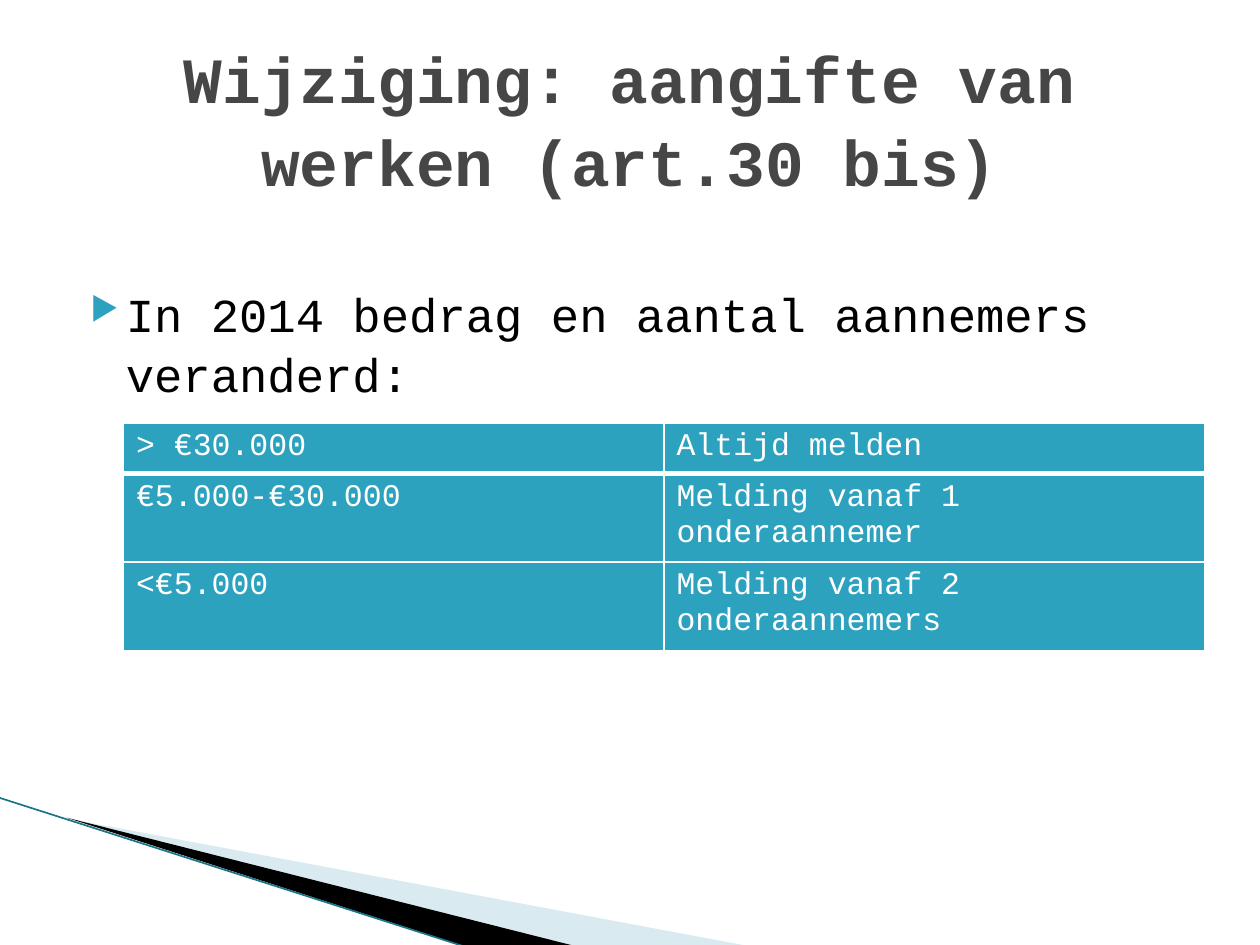
from dataclasses import dataclass
from typing import Optional

from lxml.etree import SubElement
from pptx import Presentation
from pptx.dml.color import RGBColor
from pptx.enum.shapes import MSO_CONNECTOR
from pptx.enum.text import MSO_ANCHOR as Anchor, PP_ALIGN as Align
from pptx.oxml.ns import qn
from pptx.util import Inches, Pt

COLORS = {"teal": "2DA2BF", "dark_teal": "1B7588", "pale": "A0CBDC",
          "title": "464646", "black": "000000", "white": "FFFFFF"}
FONT = "Courier New"


@dataclass
class Wedge:
    points: list[tuple[float, float]]
    color: str
    alpha: Optional[int] = None


@dataclass
class TextBlock:
    text: str
    box: tuple[float, float, float, float]
    font: dict
    color: str
    align: Align
    anchor: Anchor
    bullet: bool = False


WEDGES = [
    Wedge([(0.55, 6.5), (5.95, 7.51), (4.56, 7.51)], "pale", 40),
    Wedge([(0.53, 6.49), (4.57, 7.51), (3.72, 7.52)], "black"),
]
TEXTS = [
    TextBlock("In 2014 bedrag en aantal aannemers veranderd:", (0.5, 2.18, 9, 1.05),
              {"size": Pt(27)}, "black", Align.LEFT, Anchor.TOP, bullet=True),
    TextBlock("Wijziging: aangifte van werken (art.30 bis)", (0.5, 0.3, 9, 1.25),
              {"size": Pt(36.9), "bold": True}, "title", Align.CENTER, Anchor.MIDDLE),
]
ROWS = [
    ("> €30.000", "Altijd melden"),
    ("€5.000-€30.000", "Melding vanaf 1 onderaannemer"),
    ("<€5.000", "Melding vanaf 2 onderaannemers"),
]
ROW_HEIGHTS = [0.4, 0.66, 0.66]
COL_WIDTH = 4.29


def rgb(name: str) -> RGBColor:
    return RGBColor.from_string(COLORS[name])


def style_font(font, color: str, **values) -> None:
    for name, value in {"name": FONT, **values}.items():
        setattr(font, name, value)
    font.color.rgb = rgb(color)


def add_wedge(slide, wedge: Wedge) -> None:
    start, *rest = [(Inches(x), Inches(y)) for x, y in wedge.points]
    builder = slide.shapes.build_freeform(*start)
    builder.add_line_segments(rest, close=True)
    sp = builder.convert_to_shape()
    sp.shadow.inherit = False
    sp.fill.solid()
    sp.fill.fore_color.rgb = rgb(wedge.color)
    sp.line.fill.background()
    if wedge.alpha is not None:
        clr = sp.fill._xPr.find(".//" + qn("a:srgbClr"))
        SubElement(clr, qn("a:alpha"), val=str(wedge.alpha * 1000))


def add_edge_line(slide) -> None:
    line = slide.shapes.add_connector(
        MSO_CONNECTOR.STRAIGHT, Inches(-0.01), Inches(6.33), Inches(3.71), Inches(7.52))
    line.line.color.rgb = rgb("dark_teal")
    line.line.width = Pt(0.95)
    SubElement(line._element.spPr, qn("a:effectLst"))


def add_bullet(p) -> None:
    pPr = p._p.get_or_add_pPr()
    pPr.set("marL", str(Inches(0.4)))
    pPr.set("indent", str(Inches(-0.28)))
    clr = SubElement(pPr, qn("a:buClr"))
    SubElement(clr, qn("a:srgbClr"), val=COLORS["teal"])
    SubElement(pPr, qn("a:buSzPct"), val="68000")
    SubElement(pPr, qn("a:buChar"), char="▶")


def add_text(slide, block: TextBlock) -> None:
    tf = slide.shapes.add_textbox(*map(Inches, block.box)).text_frame
    tf.word_wrap = True
    tf.vertical_anchor = block.anchor
    p = tf.paragraphs[0]
    p.alignment = block.align
    p.line_spacing = 1.07
    if block.bullet:
        add_bullet(p)
    r = p.add_run()
    r.text = block.text
    style_font(r.font, block.color, **block.font)


def set_borders(cell, widths: dict[str, float]) -> None:
    """Put white borders before the fill, as the schema orders them."""
    tcPr = cell._tc.get_or_add_tcPr()
    for i, (side, width) in enumerate(widths.items()):
        ln = SubElement(tcPr, qn(f"a:ln{side}"), w=str(Pt(width)))
        fill = SubElement(ln, qn("a:solidFill"))
        SubElement(fill, qn("a:srgbClr"), val=COLORS["white"])
        tcPr.insert(i, ln)


def add_rules_table(slide) -> None:
    table = slide.shapes.add_table(
        len(ROWS), 2, Inches(0.98), Inches(3.36),
        Inches(2 * COL_WIDTH), Inches(sum(ROW_HEIGHTS))).table
    for col in table.columns:
        col.width = Inches(COL_WIDTH)
    for i, (texts, height) in enumerate(zip(ROWS, ROW_HEIGHTS)):
        table.rows[i].height = Inches(height)
        for j, text in enumerate(texts):
            cell = table.cell(i, j)
            cell.fill.solid()
            cell.fill.fore_color.rgb = rgb("teal")
            set_borders(cell, {"L": 1, "R": 1, "T": 3 if i == 1 else 1,
                               "B": 3 if i == 0 else 1})
            r = cell.text_frame.paragraphs[0].add_run()
            r.text = text
            style_font(r.font, "white", size=Pt(18), bold=False)


def main() -> None:
    prs = Presentation()
    prs.slide_width, prs.slide_height = Inches(10), Inches(7.5)
    slide = prs.slides.add_slide(prs.slide_layouts[6])
    for wedge in WEDGES:
        add_wedge(slide, wedge)
    add_edge_line(slide)
    for block in TEXTS:
        add_text(slide, block)
    add_rules_table(slide)
    prs.save("out.pptx")


if __name__ == "__main__":
    main()
